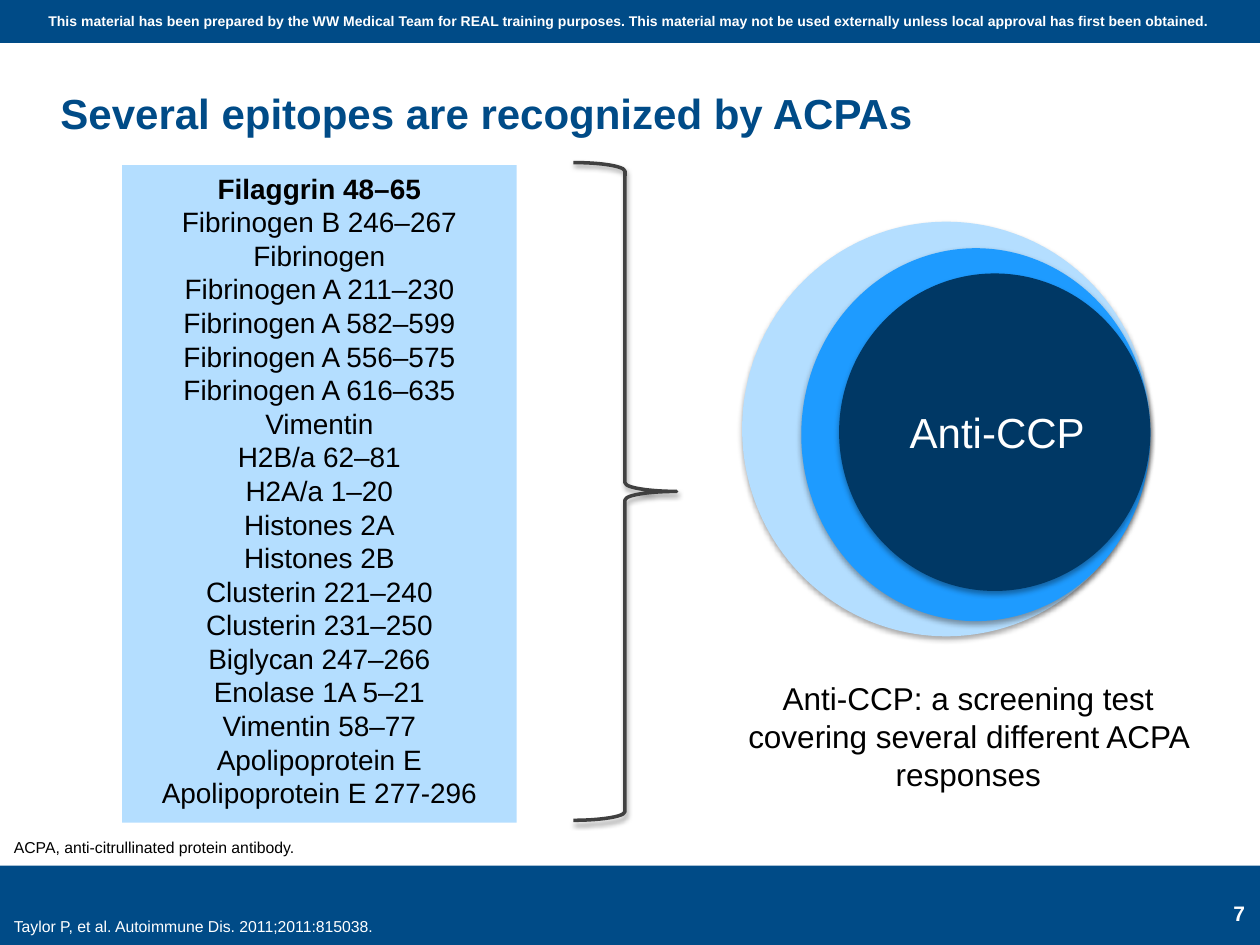
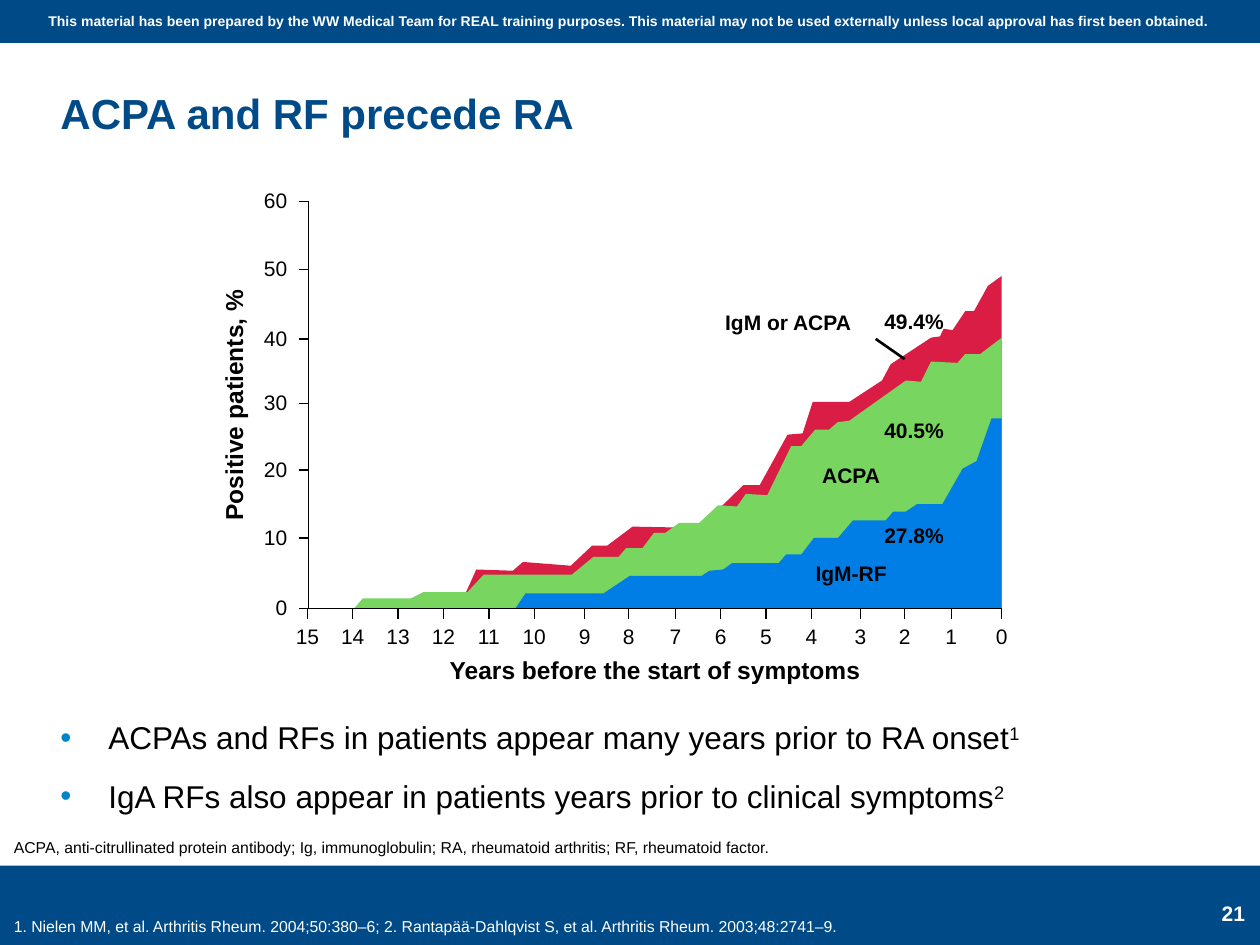
"""Build two slides on the autoantibodies that precede rheumatoid arthritis."""
import pptx
import pptx.dml.color
import pptx.enum.shapes
import pptx.enum.text
import pptx.oxml.ns
import pptx.util
from lxml import etree

Inches = pptx.util.Inches
Pt = pptx.util.Pt
SHAPE = pptx.enum.shapes.MSO_SHAPE
ALIGN = pptx.enum.text.PP_ALIGN
ANCHOR = pptx.enum.text.MSO_ANCHOR
qn = pptx.oxml.ns.qn

NAVY, PALE, BRIGHT, DEEP = "004B87", "B4DEFF", "1E9BFF", "003865"
BULLET, BRACE, WHITE, BLACK = "0085CA", "404040", "FFFFFF", "000000"
RED, GREEN, BLUE = "D91D45", "78D55F", "007EE6"
FONT = "Arial"
TITLE_INSETS = (0, 0.05, 0, 0.08)
BOX_INSETS = (0.1, 0.05, 0.1, 0.05)
NO_INSETS = (0, 0, 0, 0)
NOTICE = (
    "This material has been prepared by the WW Medical Team for REAL training purposes. "
    "This material may not be used externally unless local approval has first been obtained."
)

EPITOPES = [
    "Filaggrin 48–65", "Fibrinogen B 246–267", "Fibrinogen", "Fibrinogen A 211–230",
    "Fibrinogen A 582–599", "Fibrinogen A 556–575", "Fibrinogen A 616–635", "Vimentin",
    "H2B/a 62–81", "H2A/a 1–20", "Histones 2A", "Histones 2B", "Clusterin 221–240",
    "Clusterin 231–250", "Biglycan 247–266", "Enolase 1A 5–21", "Vimentin 58–77",
    "Apolipoprotein E", "Apolipoprotein E 277-296",
]

AXIS_LEFT, AXIS_RIGHT, AXIS_TOP, BASELINE = 2.45, 7.95, 1.6, 4.83
PERCENT_TICKS = [4.83, 4.27, 3.73, 3.2, 2.69, 2.14, 1.6]
YEAR_TICKS = [7.95, 7.55, 7.18, 6.83, 6.44, 6.08, 5.72, 5.36,
              4.99, 4.64, 4.24, 3.88, 3.52, 3.16, 2.8, 2.44]
EITHER_EDGE = [
    (7.95, 2.19), (7.84, 2.27), (7.73, 2.47), (7.66, 2.47), (7.56, 2.62), (7.49, 2.61),
    (7.46, 2.67), (7.39, 2.68), (7.07, 2.89), (7, 3.02), (6.74, 3.19), (6.45, 3.19),
    (6.37, 3.44), (6.25, 3.45), (6.03, 3.85), (5.9, 3.85), (5.55, 4.19), (5.02, 4.18),
    (4.82, 4.33), (4.7, 4.33), (4.53, 4.49), (4.15, 4.46), (4.07, 4.53), (3.78, 4.52),
    (3.64, 4.83),
]
ACPA_EDGE = [
    (7.95, 2.68), (7.78, 2.81), (7.66, 2.81), (7.6, 2.88), (7.39, 2.87), (7.31, 3.03),
    (7.19, 3.02), (6.74, 3.34), (6.65, 3.35), (6.58, 3.41), (6.47, 3.41), (6.36, 3.54),
    (6.28, 3.54), (6.09, 3.93), (5.92, 3.92), (5.85, 4.02), (5.7, 4.01), (5.55, 4.15),
    (5.39, 4.15), (5.28, 4.23), (5.19, 4.23), (5.1, 4.35), (4.97, 4.35), (4.91, 4.42),
    (4.71, 4.42), (4.54, 4.56), (3.84, 4.56), (3.71, 4.7), (3.36, 4.7), (3.26, 4.75),
    (2.88, 4.75), (2.81, 4.83),
]
RF_EDGE = [
    (7.95, 3.32), (7.87, 3.32), (7.75, 3.66), (7.64, 3.72), (7.48, 4), (7.28, 4),
    (7.19, 4.06), (7.09, 4.06), (7.03, 4.13), (6.77, 4.13), (6.65, 4.27), (6.46, 4.27),
    (6.36, 4.4), (6.24, 4.4), (6.18, 4.47), (5.81, 4.47), (5.74, 4.52), (5.63, 4.53),
    (5.57, 4.57), (5, 4.57), (4.79, 4.71), (4.17, 4.71), (4.09, 4.83),
]


def rgb(value):
    """Turn a hex string into a colour."""
    return pptx.dml.color.RGBColor.from_string(value)


class Deck:
    """Holds the style and the slide being drawn."""

    def __init__(self):
        """Open an empty 10 by 7.5 inch presentation."""
        self.presentation = pptx.Presentation()
        self.presentation.slide_width = Inches(10)
        self.presentation.slide_height = Inches(7.5)
        self.slide = None

    def start(self, title, number, abbreviations, citation):
        """Add a slide with its title, bands, notes and number."""
        layout = self.presentation.slide_layouts[1]
        self.slide = self.presentation.slides.add_slide(layout)
        self.band(0, 0.34)
        self.band(6.87, 0.63)
        self.text(0, 0.05, 9.99, 0.24, NOTICE, 8, WHITE, True, insets=BOX_INSETS)
        heading = self.place(self.slide.shapes.title, 0.48, 0.46, 9.25, 0.9)
        self.set_text(heading.text_frame, [title], 24, NAVY, True, ALIGN.LEFT,
                      TITLE_INSETS, ANCHOR.MIDDLE)
        self.text(0.11, 6.32, 9.24, 0.48, abbreviations, 9, align=ALIGN.LEFT,
                  anchor=ANCHOR.BOTTOM)
        self.text(0.11, 6.95, 8.65, 0.48, citation, 9, WHITE, align=ALIGN.LEFT,
                  anchor=ANCHOR.BOTTOM)
        self.text(9.31, 7.1, 0.67, 0.31, number, 12, WHITE, True, ALIGN.RIGHT, BOX_INSETS)

    def place(self, shape, left, top, width, height):
        """Move a shape and give it a size."""
        shape.left, shape.top = Inches(left), Inches(top)
        shape.width, shape.height = Inches(width), Inches(height)
        return shape

    def set_text(self, frame, lines, size, color=BLACK, bold=False, align=ALIGN.CENTER,
                 insets=NO_INSETS, anchor=ANCHOR.TOP):
        """Fill a text frame with one paragraph a line."""
        frame.word_wrap = True
        frame.auto_size = pptx.enum.text.MSO_AUTO_SIZE.NONE
        frame.vertical_anchor = anchor
        (frame.margin_left, frame.margin_top,
         frame.margin_right, frame.margin_bottom) = map(Inches, insets)
        for index, line in enumerate(lines):
            paragraph = frame.add_paragraph() if index else frame.paragraphs[0]
            paragraph.add_run().text = line
            paragraph.alignment = align
            paragraph.space_before = Pt(0)
            self.style(paragraph, size, color, bold)

    def style(self, paragraph, size, color, bold):
        """Set the font of a paragraph."""
        font = paragraph.font
        font.name, font.size, font.bold = FONT, Pt(size), bold
        font.color.rgb = rgb(color)

    def text(self, left, top, width, height, words, size, color=BLACK, bold=False,
             align=ALIGN.CENTER, insets=NO_INSETS, anchor=ANCHOR.TOP):
        """Add a text box of one paragraph."""
        box = self.slide.shapes.add_textbox(
            Inches(left), Inches(top), Inches(width), Inches(height))
        self.set_text(box.text_frame, [words], size, color, bold, align, insets, anchor)
        return box

    def body(self, left, top, width, height):
        """Move the body placeholder and return its text frame."""
        return self.place(self.slide.placeholders[1], left, top, width, height).text_frame

    def caption(self, left, top, width, height, words):
        """Use the body placeholder for a centred caption."""
        frame = self.body(left, top, width, height)
        properties = frame.paragraphs[0]._p.get_or_add_pPr()
        properties.set("marL", "0")
        properties.set("indent", "0")
        etree.SubElement(properties, qn("a:buNone"))
        self.set_text(frame, [words], 18, insets=TITLE_INSETS)

    def bullets(self, left, top, width, height, items):
        """Use the body placeholder for a list of points with reference marks."""
        frame = self.body(left, top, width, height)
        self.set_text(frame, [], 18, insets=TITLE_INSETS)
        for index, (point, reference) in enumerate(items):
            paragraph = frame.add_paragraph() if index else frame.paragraphs[0]
            paragraph.add_run().text = point
            mark = paragraph.add_run()
            mark.text = reference
            mark._r.get_or_add_rPr().set("baseline", "30000")
            paragraph.alignment = ALIGN.LEFT
            paragraph.space_before, paragraph.space_after = Pt(0), Pt(12)
            properties = paragraph._p.get_or_add_pPr()
            properties.set("marL", str(Inches(0.38)))
            properties.set("indent", str(-Inches(0.38)))
            tint = etree.SubElement(properties, qn("a:buClr"))
            etree.SubElement(tint, qn("a:srgbClr"), val=BULLET)
            etree.SubElement(properties, qn("a:buFont"), typeface=FONT)
            etree.SubElement(properties, qn("a:buChar"), char="•")
            self.style(paragraph, 18, BLACK, False)

    def shape(self, kind, left, top, width, height, fill=None, line=None):
        """Add a preset shape, outlined or filled."""
        shape = self.slide.shapes.add_shape(
            kind, Inches(left), Inches(top), Inches(width), Inches(height))
        return self.paint(shape, fill, line, 2)

    def paint(self, shape, fill, line, weight):
        """Set the fill and line of a shape and clear its shadow."""
        shape.shadow.inherit = False
        if fill:
            shape.fill.solid()
            shape.fill.fore_color.rgb = rgb(fill)
        else:
            shape.fill.background()
        if line:
            shape.line.color.rgb = rgb(line)
            shape.line.width = Pt(weight)
        else:
            shape.line.fill.background()
        return shape

    def band(self, top, height):
        """Add a band across the slide."""
        self.shape(SHAPE.RECTANGLE, 0, top, 10, height, NAVY)

    def cast_shadow(self, shape, opacity, distance):
        """Give a shape a soft shadow below it."""
        effects = shape._element.spPr.find(qn("a:effectLst"))
        shadow = etree.SubElement(
            effects, qn("a:outerShdw"), blurRad=str(Pt(3.1)), dist=str(Pt(distance)),
            dir="5400000", rotWithShape="0")
        tint = etree.SubElement(shadow, qn("a:srgbClr"), val=BLACK)
        etree.SubElement(tint, qn("a:alpha"), val=str(opacity * 1000))

    def outline(self, points, fill=None, line=None):
        """Add a freeform, closed when it is filled."""
        start, *rest = [(Inches(x), Inches(y)) for x, y in points]
        builder = self.slide.shapes.build_freeform(*start)
        builder.add_line_segments(rest, close=fill is not None)
        return self.paint(builder.convert_to_shape(), fill, line, 0.75)

    def line(self, x1, y1, x2, y2, weight=0.75):
        """Add a straight black line."""
        line = self.slide.shapes.add_connector(
            pptx.enum.shapes.MSO_CONNECTOR.STRAIGHT,
            Inches(x1), Inches(y1), Inches(x2), Inches(y2))
        line.line.color.rgb = rgb(BLACK)
        line.line.width = Pt(weight)
        etree.SubElement(line._element.spPr, qn("a:effectLst"))


def draw_epitopes(deck):
    """Draw the slide on epitopes."""
    deck.start("Several epitopes are recognized by ACPAs", "7",
               "ACPA, anti-citrullinated protein antibody.",
               "Taylor P, et al. Autoimmune Dis. 2011;2011:815038.")
    panel = deck.shape(SHAPE.RECTANGLE, 0.97, 1.31, 3.13, 5.22, PALE)
    deck.set_text(panel.text_frame, EPITOPES, 16, insets=BOX_INSETS)
    panel.text_frame.paragraphs[0].font.bold = True
    brace = deck.shape(SHAPE.RIGHT_BRACE, 4.55, 1.29, 0.82, 5.22, line=BRACE)
    deck.cast_shadow(brace, 38, 1.6)
    for top, width, height, fill in [(1.76, 3.24, 3.29, PALE), (1.97, 2.77, 2.96, BRIGHT),
                                     (2.17, 2.47, 2.52, DEEP)]:
        circle = deck.shape(SHAPE.OVAL, 9.13 - width, top, width, height, fill)
        deck.cast_shadow(circle, 35, 1.8)
    deck.set_text(circle.text_frame, ["Anti-CCP"], 24, WHITE,
                  insets=(0.04, 0.05, 0, 0.05), anchor=ANCHOR.MIDDLE)
    deck.caption(5.8, 5.34, 3.77, 0.98,
                 "Anti-CCP: a screening test covering several different ACPA responses")


def draw_onset(deck):
    """Draw the slide on the years before symptoms."""
    deck.start("ACPA and RF precede RA", "21",
               "ACPA, anti-citrullinated protein antibody; Ig, immunoglobulin; "
               "RA, rheumatoid arthritis; RF, rheumatoid factor.",
               "1. Nielen MM, et al. Arthritis Rheum. 2004;50:380–6; "
               "2. Rantapää-Dahlqvist S, et al. Arthritis Rheum. 2003;48:2741–9.")
    for edge, fill in [(EITHER_EDGE, RED), (ACPA_EDGE, GREEN), (RF_EDGE, BLUE)]:
        deck.outline(edge + [(AXIS_RIGHT, BASELINE)], fill)
    deck.outline([(AXIS_LEFT, AXIS_TOP), (AXIS_LEFT, BASELINE), (AXIS_RIGHT, BASELINE)],
                 line=BLACK)
    for step, y in enumerate(PERCENT_TICKS):
        deck.line(AXIS_LEFT, y, AXIS_LEFT - 0.08, y)
        deck.text(1.94, y - 0.11, 0.34, 0.21, str(step * 10), 12, align=ALIGN.RIGHT)
    for year, x in enumerate(YEAR_TICKS):
        deck.line(x, BASELINE, x, BASELINE + 0.08)
        deck.text(x - 0.17, 4.95, 0.34, 0.21, str(year), 12)
    deck.text(AXIS_LEFT, 5.2, 5.5, 0.21, "Years before the start of symptoms", 14, bold=True)
    percent_title = deck.text(0.23, 3.11, 3.22, 0.21, "Positive patients, %", 14, bold=True)
    percent_title.rotation = 270
    for top, share in [(2.45, "49.4%"), (3.31, "40.5%"), (4.15, "27.8%")]:
        deck.text(6.97, top, 0.57, 0.21, share, 12, bold=True)
    for left, top, antibody in [(5.55, 2.46, "IgM or ACPA"), (6.05, 3.67, "ACPA"),
                                (6.05, 4.45, "IgM-RF")]:
        deck.text(left, top, 1.41, 0.21, antibody, 12, bold=True)
    deck.line(6.95, 2.69, 7.18, 2.85, 1.5)
    deck.bullets(0.48, 5.65, 9.25, 0.9, [
        ("ACPAs and RFs in patients appear many years prior to RA onset", "1"),
        ("IgA RFs also appear in patients years prior to clinical symptoms", "2"),
    ])


def main():
    """Build and save the slides."""
    deck = Deck()
    draw_epitopes(deck)
    draw_onset(deck)
    deck.presentation.save("out.pptx")


if __name__ == "__main__":
    main()
